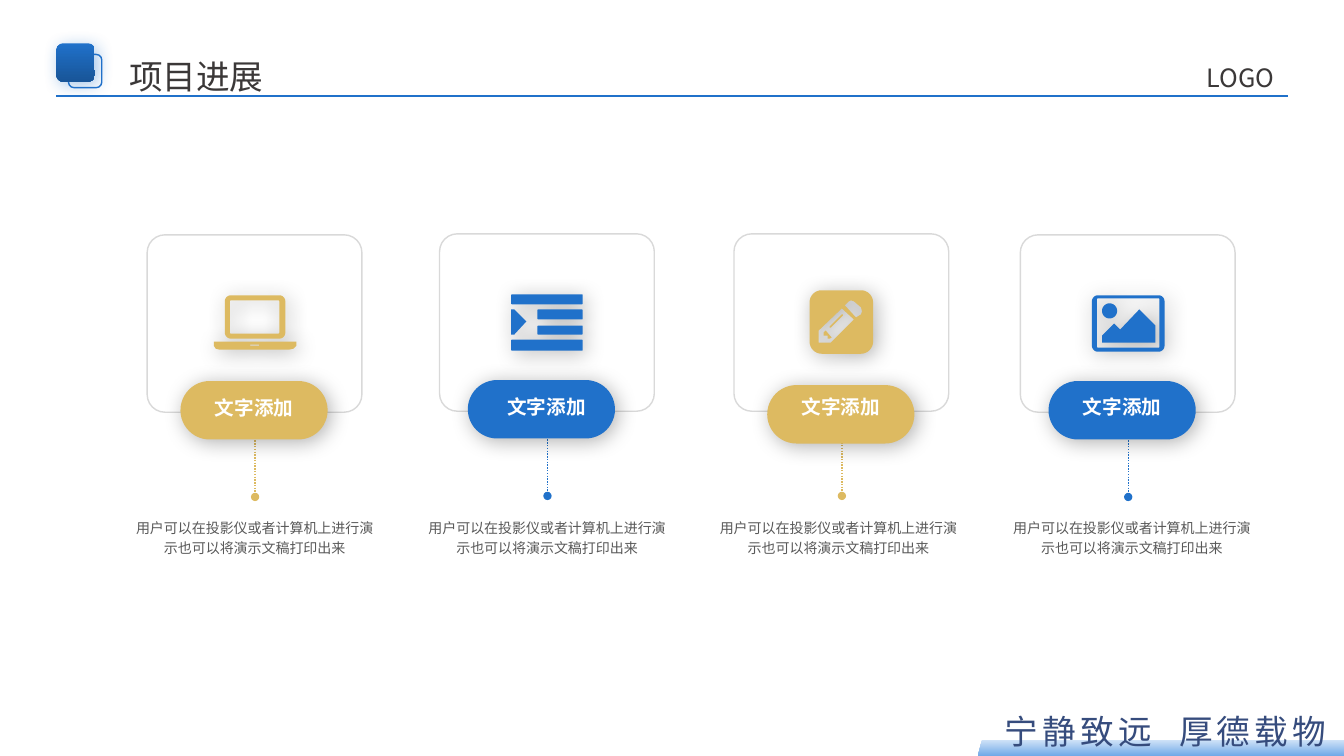
from math import cos, pi, sin
from lxml.etree import SubElement
from pptx import Presentation
from pptx.dml.color import RGBColor
from pptx.enum.dml import MSO_LINE
from pptx.enum.shapes import MSO_CONNECTOR, MSO_SHAPE
from pptx.enum.text import PP_ALIGN
from pptx.oxml.ns import qn
from pptx.util import Pt

PX = 9144  # 100 px to the inch
FACE = "Noto Sans CJK SC"
BLUE, GOLD, DARK, NAVY = "2071CA", "DDBA61", "3B3838", "364C7D"
GREY, EDGE, WHITE = "595959", "D9D9D9", "FFFFFF"
LABEL = "文字添加"
NOTE = "用户可以在投影仪或者计算机上进行演示也可以将演示文稿打印出来"
SHADE = ("000000", 30, 15)
GLOW = (BLUE, 40, 12)


def curve(left, top, right, bottom, rad):
    """Points of a rectangle with round corners."""
    spots = [(right - rad, bottom - rad), (left + rad, bottom - rad),
             (left + rad, top + rad), (right - rad, top + rad)]
    return [(x + rad * cos(a), y + rad * sin(a))
            for turn, (x, y) in enumerate(spots)
            for a in [(turn + step / 8) * pi / 2 for step in range(9)]]


LAPTOP = [
    [(212, 339), (294, 339), (294, 343), (291, 346), (286, 347),
     (218, 347), (214, 346), (212, 343)],
    curve(223, 293, 283, 336, 6),
    curve(228, 298, 277, 331, 1),
    [(248, 342), (257, 342), (257, 343), (248, 343)],
]
INDENT = [
    curve(507, 292, 578, 302, 1),
    [(507, 307), (510, 307), (522, 319), (510, 332), (507, 332)],
    curve(533, 307, 578, 317, 1),
    curve(533, 323, 578, 332, 1),
    curve(507, 337, 578, 348, 1),
]
PENCIL = [
    curve(803, 288, 866, 351, 12),
    [(847, 317), (835, 306), (812, 328), (812, 340), (824, 340)],
    [(825, 335), (823, 336), (821, 336), (821, 333), (817, 333),
     (817, 330), (819, 328)],
    [(836, 313), (824, 325), (823, 325), (823, 324), (835, 312), (836, 312)],
    [(854, 312), (855, 309), (854, 305), (847, 299), (844, 298),
     (842, 299), (838, 303), (849, 315)],
]
PHOTO = [
    curve(1083, 293, 1155, 349, 6),
    curve(1088, 296, 1150, 345, 1),
    curve(1093, 301, 1108, 316, 7.5),
    [(1146, 340), (1093, 340), (1093, 333), (1105, 321), (1111, 327),
     (1130, 307), (1146, 323)],
]

# colour, icon, left and top of card, pill and label, left of note
CARDS = [
    (GOLD, LAPTOP, (146, 233), (179, 378), (179, 383), 122),
    (BLUE, INDENT, (436, 232), (464, 377), (469, 382), 412),
    (GOLD, PENCIL, (728, 232), (761, 382), (761, 382), 701),
    (BLUE, PHOTO, (1012, 233), (1040, 378), (1040, 382), 992),
]
# words, box, size, colour, align, inset, letter gap
HEADS = [
    ("宁静致远", (955, 700, 229, 50), 24, NAVY, PP_ALIGN.CENTER, True, 3),
    ("厚德载物", (1128, 700, 229, 50), 24, NAVY, PP_ALIGN.CENTER, True, 3),
    ("LOGO", (1197, 62, 80, 30), 18, DARK, PP_ALIGN.JUSTIFY, False, 0),
    ("项目进展", (128, 55, 148, 40), 24, DARK, PP_ALIGN.JUSTIFY, False, 0),
]

deck = Presentation()
deck.slide_width, deck.slide_height = 1333 * PX, 750 * PX
page = deck.slides.add_slide(deck.slide_layouts[6])
shapes = page.shapes


def hue(code):
    return RGBColor.from_string(code)


def emu(box):
    return [n * PX for n in box]


def style(item, fill=None, edge=None, shade=None):
    """Set fill (one colour or a pair for a gradient), outline and shadow."""
    if isinstance(fill, tuple):
        item.fill.gradient()
        item.fill.gradient_angle = 270
        for stop, code in zip(item.fill.gradient_stops, fill):
            stop.color.rgb = hue(code)
    elif fill:
        item.fill.solid()
        item.fill.fore_color.rgb = hue(fill)
    else:
        item.fill.background()
    if edge:
        item.line.color.rgb = hue(edge)
        item.line.width = Pt(1)
    else:
        item.line.fill.background()
    item.shadow.inherit = False
    if shade:
        code, alpha, blur = shade
        effect = item._element.spPr.find(qn("a:effectLst"))
        outer = SubElement(effect, qn("a:outerShdw"), blurRad=str(Pt(blur)),
                           dist=str(Pt(3)), dir="2700000", algn="tl",
                           rotWithShape="0")
        tint = SubElement(outer, qn("a:srgbClr"), val=code)
        SubElement(tint, qn("a:alpha"), val=str(alpha * 1000))


def block(kind, box, adj=None, **look):
    item = shapes.add_shape(kind, *emu(box))
    if adj:
        item.adjustments[0] = adj
    style(item, **look)


def draw(rings, **look):
    """Draw closed rings as one outline; inner rings are holes."""
    rings = [[tuple(emu(spot)) for spot in ring] for ring in rings]
    pen = shapes.build_freeform(*rings[0][0], scale=1.0)
    for ring in rings:
        pen.move_to(*ring[0])
        pen.add_line_segments(ring[1:], close=True)
    style(pen.convert_to_shape(), **look)


def rule(ends, code, width, dots=False):
    line = shapes.add_connector(MSO_CONNECTOR.STRAIGHT, *emu(ends))
    line.line.color.rgb = hue(code)
    line.line.width = Pt(width)
    props = line._element.spPr
    if dots:
        line.line.dash_style = MSO_LINE.ROUND_DOT
        SubElement(props.find(qn("a:ln")), qn("a:tailEnd"), type="oval")
    SubElement(props, qn("a:effectLst"))


def write(words, box, size, code, align=PP_ALIGN.CENTER, inset=True, gap=0,
          lead=None, bold=False):
    frame = shapes.add_textbox(*emu(box)).text_frame
    frame.word_wrap = True
    if not inset:
        for side in ("left", "top", "right", "bottom"):
            setattr(frame, "margin_" + side, 0)
    para = frame.paragraphs[0]
    para.alignment, para.line_spacing = align, lead
    run = para.add_run()
    run.text = words
    for key, val in dict(size=Pt(size), name=FACE, bold=bold).items():
        setattr(run.font, key, val)
    run.font.color.rgb = hue(code)
    props = run._r.get_or_add_rPr()
    SubElement(props, qn("a:ea"), typeface=FACE)
    if gap:
        props.set("spc", str(gap * 100))


ROUND = MSO_SHAPE.ROUNDED_RECTANGLE
rule((1277, 95, 56, 95), BLUE, 1.5)
block(ROUND, (68, 54, 33, 33), edge=BLUE)
block(ROUND, (56, 43, 38, 38), fill=(BLUE, "185598"), shade=GLOW)
block(MSO_SHAPE.PARALLELOGRAM, (970, 734, 415, 16), fill=("CFE2F7", "70A9E8"))
for head in HEADS:
    write(*head)

for code, icon, card, pill, label, note in CARDS:
    left, top = card
    stem = left + 107
    rule((stem, top + 204, stem, top + 260), code, 1, dots=True)
    block(ROUND, (left, top, 213, 176), adj=0.1, edge=EDGE)
    block(ROUND, (*pill, 146, 58), adj=0.5, fill=code, shade=SHADE)
    draw(icon, fill=code, shade=SHADE)
    write(LABEL, (*label, 146, 36), 14, WHITE, lead=1.2, bold=True)
    write(NOTE, (note, 507, 261, 50), 10, GREY, lead=1.2)

deck.save("out.pptx")
